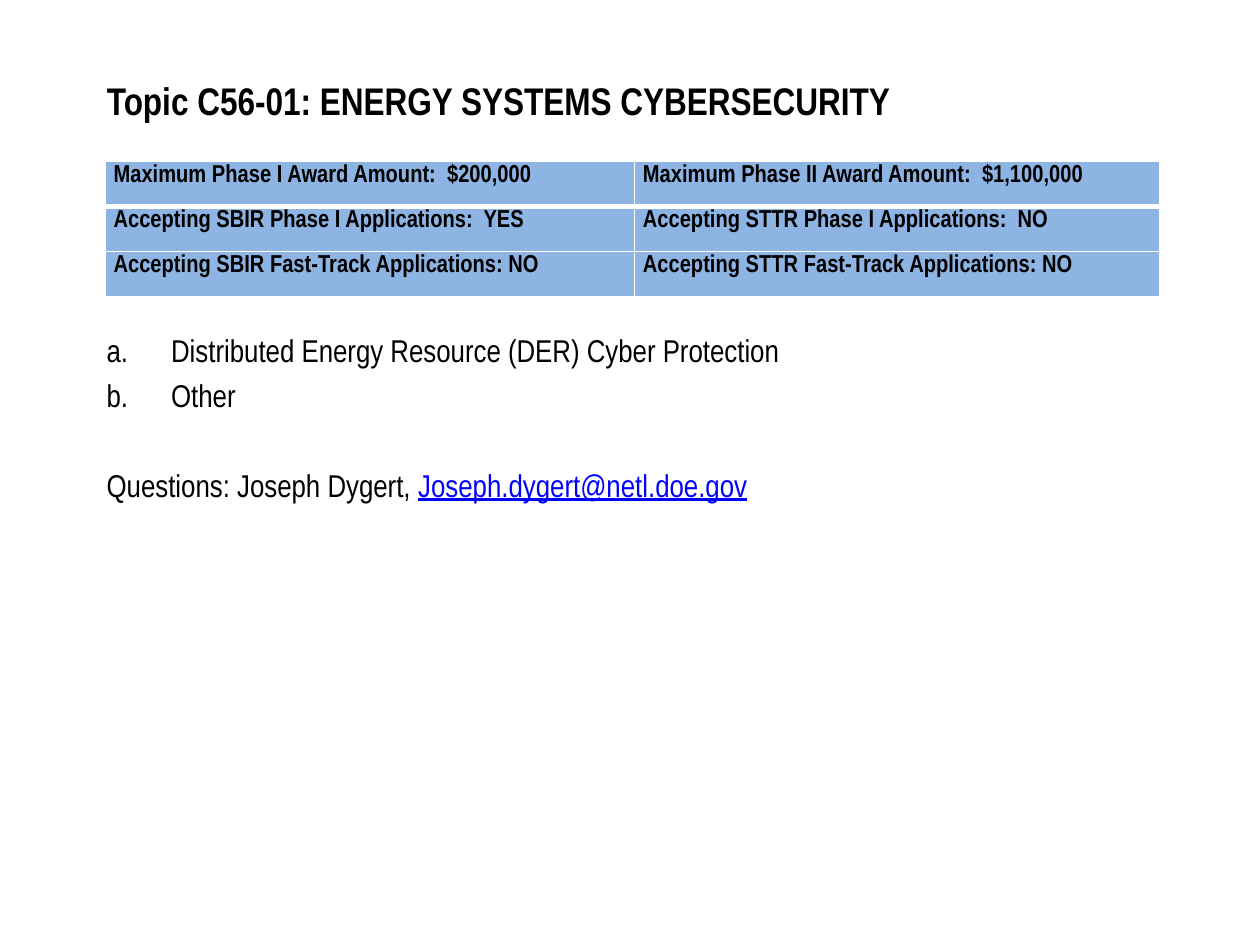
from lxml.etree import SubElement
from pptx import Presentation
from pptx.dml.color import RGBColor
from pptx.enum.text import MSO_ANCHOR, MSO_AUTO_SIZE, PP_ALIGN
from pptx.oxml.ns import qn
from pptx.util import Cm, Pt

FONT = "Arial Narrow"
COLORS = {"text": "000000", "link": "0000FF", "cell": "8EB4E3", "border": "FFFFFF"}

AWARD_TERMS = [
    ("Maximum Phase I Award Amount:  $200,000",
     "Maximum Phase II Award Amount:  $1,100,000"),
    ("Accepting SBIR Phase I Applications:  YES",
     "Accepting STTR Phase I Applications:  NO"),
    ("Accepting SBIR Fast-Track Applications: NO",
     "Accepting STTR Fast-Track Applications: NO"),
]
SUBTOPICS = ["Distributed Energy Resource (DER) Cyber Protection", "Other"]


def add_run(paragraph, text, size, color="text", bold=False, underline=False):
    run = paragraph.add_run()
    run.text = text
    font = run.font
    font.name, font.size, font.bold, font.underline = FONT, Pt(size), bold, underline
    font.color.rgb = RGBColor.from_string(COLORS[color])


def add_heading(slide, text):
    heading = slide.shapes.title
    heading.left, heading.top = Cm(1.9), Cm(0.84)
    heading.width, heading.height = Cm(22.66), Cm(2.34)
    frame = heading.text_frame
    frame.auto_size = MSO_AUTO_SIZE.NONE
    frame.vertical_anchor = MSO_ANCHOR.MIDDLE
    paragraph = frame.paragraphs[0]
    paragraph.alignment = PP_ALIGN.LEFT
    add_run(paragraph, text, 22, bold=True)


def set_border(cell, side, points):
    line = SubElement(cell._tc.get_or_add_tcPr(), qn(f"a:ln{side}"), w=str(Pt(points)))
    fill = SubElement(line, qn("a:solidFill"))
    SubElement(fill, qn("a:srgbClr"), val=COLORS["border"])


def format_cell(cell, text, borders):
    cell.margin_left = cell.margin_right = Cm(0.17)
    cell.margin_top = cell.margin_bottom = 0
    # Borders come before the fill in the cell properties
    for side, points in borders.items():
        set_border(cell, side, points)
    cell.fill.solid()
    cell.fill.fore_color.rgb = RGBColor.from_string(COLORS["cell"])
    paragraph = cell.text_frame.paragraphs[0]
    paragraph.line_spacing = 1.15
    add_run(paragraph, text, 14, bold=True)


def add_award_table(slide, rows):
    awards = slide.shapes.add_table(
        len(rows), 2, Cm(2.12), Cm(3.25), Cm(21.26), Cm(2.73)).table
    awards.columns[0].width, awards.columns[1].width = Cm(10.67), Cm(10.59)
    for r, row in enumerate(rows):
        awards.rows[r].height = Cm(0.91)
        # A thick rule parts the amounts from the rest
        borders = {"L": 1, "R": 1, "T": 3 if r == 1 else 1, "B": 3 if r == 0 else 1}
        for c, text in enumerate(row):
            format_cell(awards.cell(r, c), text, borders)


def letter_paragraph(paragraph):
    properties = paragraph._p.get_or_add_pPr()
    properties.set("marL", str(Cm(1.3)))
    properties.set("indent", str(-Cm(1.3)))
    SubElement(properties, qn("a:buFont"), typeface=FONT)
    SubElement(properties, qn("a:buAutoNum"), type="alphaLcPeriod")


def add_subtopics(slide, subtopics, contact, email):
    box = slide.shapes.add_textbox(Cm(1.9), Cm(6.55), Cm(22.02), Cm(6.99))
    frame = box.text_frame
    frame.word_wrap = True
    # Lettered subtopics
    for i, subtopic in enumerate(subtopics):
        paragraph = frame.add_paragraph() if i else frame.paragraphs[0]
        paragraph.space_before = Pt(4.3)
        letter_paragraph(paragraph)
        add_run(paragraph, subtopic, 18)
    # Contact line
    questions = frame.add_paragraph()
    questions.space_before = Pt(29.4)
    add_run(questions, f"Questions: {contact}, ", 18)
    add_run(questions, email, 18, color="link", underline=True)


def main():
    deck = Presentation()
    deck.slide_width, deck.slide_height = Cm(25.4), Cm(19.05)
    slide = deck.slides.add_slide(deck.slide_layouts[5])
    add_heading(slide, "Topic C56-01: ENERGY SYSTEMS CYBERSECURITY")
    add_subtopics(slide, SUBTOPICS, "Joseph Dygert", "Joseph.dygert@netl.doe.gov")
    add_award_table(slide, AWARD_TERMS)
    deck.save("out.pptx")


if __name__ == "__main__":
    main()
